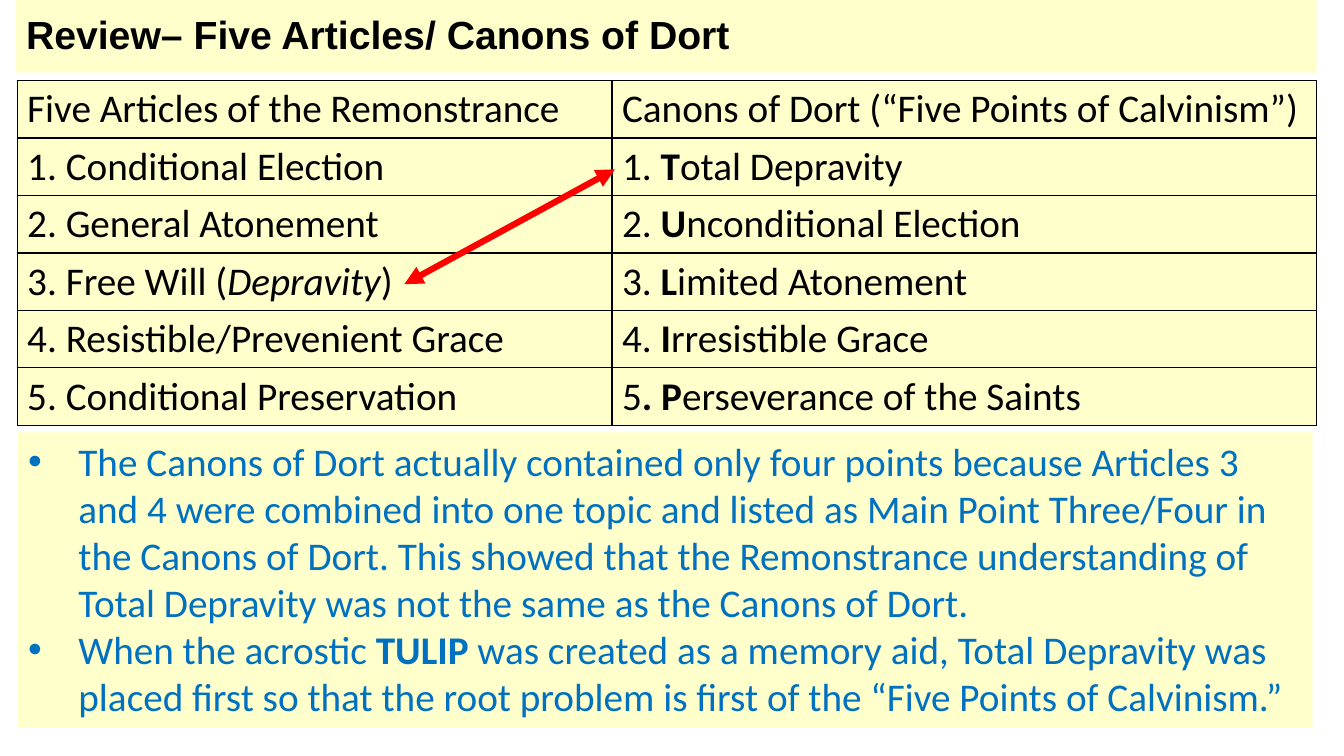
"""Build the review slide on the Five Articles and the Canons of Dort."""
from dataclasses import dataclass

from lxml import etree
from pptx import Presentation
from pptx.dml.color import RGBColor
from pptx.enum.shapes import MSO_CONNECTOR
from pptx.enum.text import MSO_ANCHOR, MSO_AUTO_SIZE
from pptx.oxml.ns import qn
from pptx.shapes.autoshape import Shape
from pptx.slide import Slide
from pptx.table import _Cell
from pptx.text.text import _Paragraph
from pptx.util import Emu, Pt

STRAIGHT = MSO_CONNECTOR.STRAIGHT
MIDDLE = MSO_ANCHOR.MIDDLE
GROW = MSO_AUTO_SIZE.SHAPE_TO_FIT_TEXT

CREAM = RGBColor(0xFF, 0xFF, 0xCC)
BLACK = RGBColor(0x00, 0x00, 0x00)
BLUE = RGBColor(0x00, 0x70, 0xC0)
RED = RGBColor(0xFF, 0x00, 0x00)

SCALE = 9144
SIZE = Pt(28)
INDENT = 50
COLS = (590, 699)
ROW = 57


@dataclass
class Line:
    """A line of text with an optional stressed part."""
    lead: str
    mark: str = ""
    tail: str = ""
    slant: bool = False


@dataclass
class Box:
    """A place on the slide in px."""
    left: int
    top: int
    width: int
    height: int


TITLE = Line("", "Review– Five Articles/ Canons of Dort")
ROWS = [
    (Line("Five Articles of the Remonstrance"),
     Line("Canons of Dort (“Five Points of Calvinism”)")),
    (Line("1. Conditional Election"), Line("1. ", "T", "otal Depravity")),
    (Line("2. General Atonement"), Line("2. ", "U", "nconditional Election")),
    (Line("3. Free Will (", "Depravity", ")", True), Line("3. ", "L", "imited Atonement")),
    (Line("4. Resistible/Prevenient Grace"), Line("4. ", "I", "rresistible Grace")),
    (Line("5. Conditional Preservation"), Line("5", ". P", "erseverance of the Saints")),
]
NOTES = [
    Line("The Canons of Dort actually contained only four points because Articles 3 "
         "and 4 were combined into one topic and listed as Main Point Three/Four in "
         "the Canons of Dort. This showed that the Remonstrance understanding of "
         "Total Depravity was not the same as the Canons of Dort."),
    Line("When the acrostic ", "TULIP",
         " was created as a memory aid, Total Depravity was placed first so that "
         "the root problem is first of the “Five Points of Calvinism.”"),
]


def px(count: int) -> Emu:
    """Turn px into EMU."""
    return Emu(count * SCALE)


def write(para: _Paragraph, line: Line, color: RGBColor, face: str = "Calibri") -> None:
    """Write a line into a paragraph and format its runs."""
    for text in filter(None, (line.lead, line.mark, line.tail)):
        run = para.add_run()
        run.text = text
        font = run.font
        font.name, font.size = face, SIZE
        font.color.rgb = color
        font.bold = text == line.mark and not line.slant
        font.italic = text == line.mark and line.slant


def panel(slide: Slide, box: Box) -> Shape:
    """Add a cream text box."""
    shape = slide.shapes.add_textbox(px(box.left), px(box.top), px(box.width), px(box.height))
    shape.fill.solid()
    shape.fill.fore_color.rgb = CREAM
    shape.text_frame.word_wrap = True
    return shape


def bullet(para: _Paragraph) -> None:
    """Give a paragraph a hanging bullet."""
    props = para._p.get_or_add_pPr()
    props.set("marL", str(px(INDENT)))
    props.set("indent", str(-px(INDENT)))
    etree.SubElement(props, qn("a:buFont"), typeface="Arial")
    etree.SubElement(props, qn("a:buChar"), char="•")


def frame(cell: _Cell) -> None:
    """Give a cell black borders and a cream fill."""
    props = cell._tc.get_or_add_tcPr()
    for side in ("lnL", "lnR", "lnT", "lnB"):
        edge = etree.SubElement(props, qn(f"a:{side}"), w=str(Pt(1)))
        fill = etree.SubElement(edge, qn("a:solidFill"))
        etree.SubElement(fill, qn("a:srgbClr"), val=str(BLACK))
    cell.fill.solid()
    cell.fill.fore_color.rgb = CREAM


def grid(slide: Slide, left: int, top: int) -> None:
    """Draw the table that sets the two lists side by side."""
    table = slide.shapes.add_table(len(ROWS), len(COLS), px(left), px(top),
                                   px(sum(COLS)), px(ROW * len(ROWS))).table
    table.first_row = table.horz_banding = False
    for col, width in zip(table.columns, COLS):
        col.width = px(width)
    for row, lines in zip(table.rows, ROWS):
        for cell, line in zip(row.cells, lines):
            frame(cell)
            write(cell.text_frame.paragraphs[0], line, BLACK)


def arrow(slide: Slide, start: tuple[int, int], end: tuple[int, int]) -> None:
    """Draw a red arrow with a head at both ends."""
    link = slide.shapes.add_connector(STRAIGHT, *map(px, start + end))
    link.line.color.rgb = RED
    link.line.width = Pt(4.5)
    props = link.element.spPr
    for tip in ("headEnd", "tailEnd"):
        etree.SubElement(props.find(qn("a:ln")), qn(f"a:{tip}"), type="triangle")
    etree.SubElement(props, qn("a:effectLst"))


def main() -> None:
    """Build and save the slide."""
    deck = Presentation()
    deck.slide_width, deck.slide_height = px(1333), px(750)
    slide = deck.slides.add_slide(deck.slide_layouts[6])

    title = panel(slide, Box(16, 0, 1290, 72)).text_frame
    title.vertical_anchor = MIDDLE
    title.paragraphs[0].line_spacing = 0.9
    write(title.paragraphs[0], TITLE, BLACK, "Arial")

    grid(slide, 17, 80)

    body = panel(slide, Box(18, 429, 1284, 293)).text_frame
    body.auto_size = GROW
    for index, note in enumerate(NOTES):
        para = body.add_paragraph() if index else body.paragraphs[0]
        bullet(para)
        write(para, note, BLUE)

    arrow(slide, (401, 282), (610, 168))
    deck.save("out.pptx")


if __name__ == "__main__":
    main()
